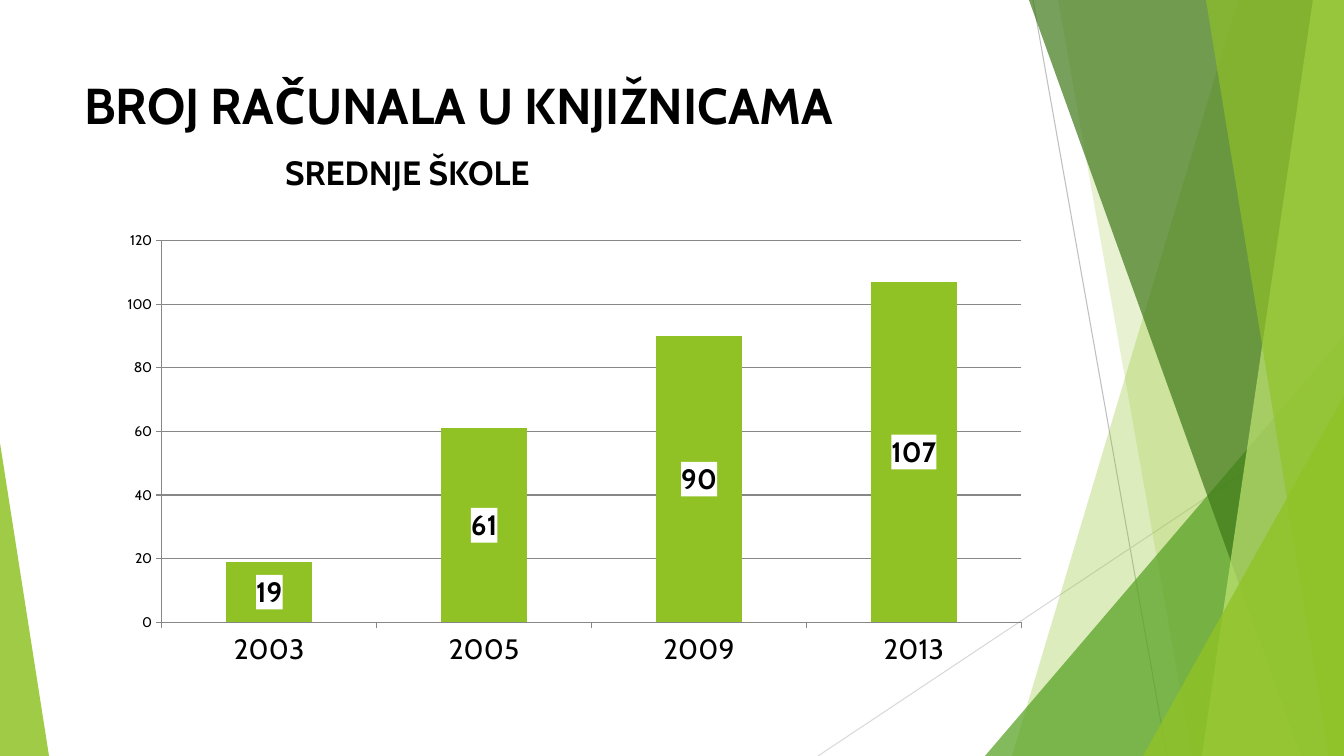
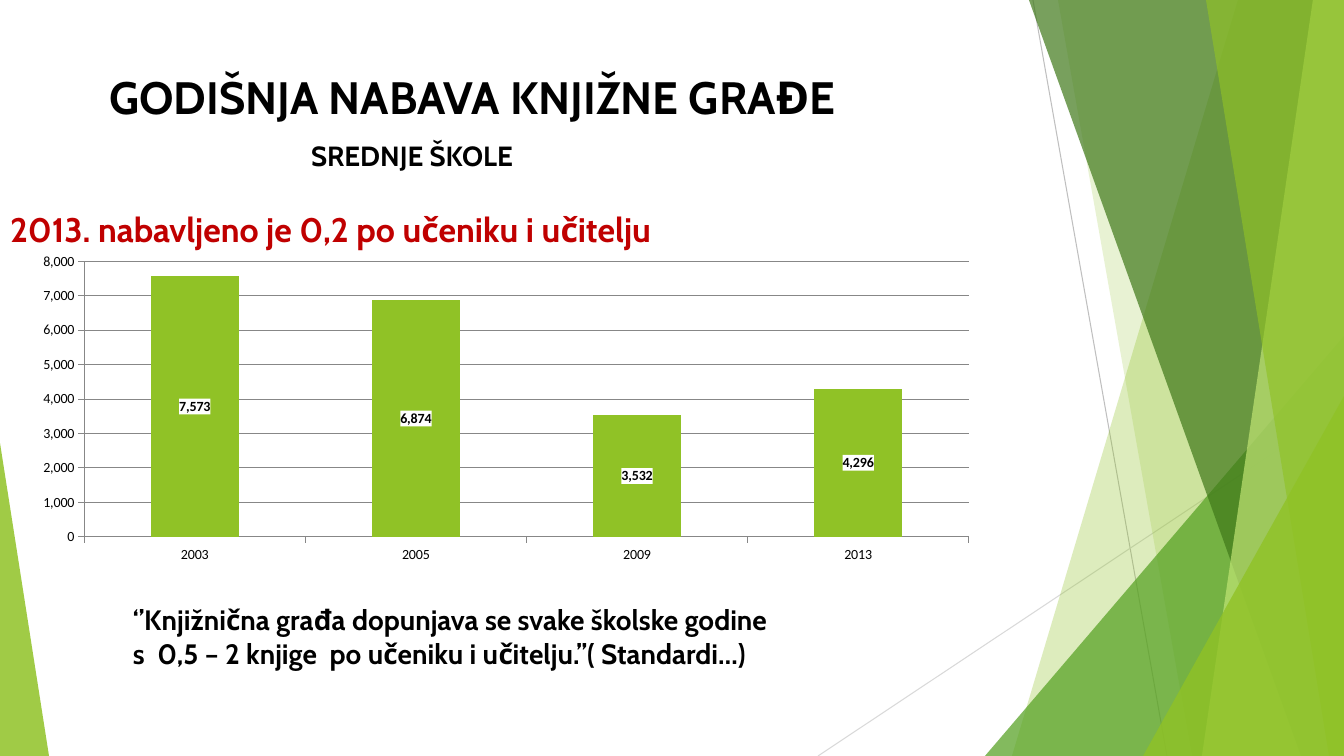
from pptx import Presentation
from pptx.chart.data import CategoryChartData
from pptx.dml.color import RGBColor
from pptx.enum.chart import XL_CHART_TYPE as ChartType, XL_TICK_MARK as TickMark
from pptx.enum.shapes import MSO_CONNECTOR as Connector, MSO_SHAPE as Shape
from pptx.oxml import parse_xml
from pptx.oxml.ns import nsdecls, qn
from pptx.util import Emu, Pt

WIDTH, HEIGHT = 1344, 756
EMU_PER_PX = 914400 / 100.8

BLACK = RGBColor(0x00, 0x00, 0x00)
RED = RGBColor(0xC0, 0x00, 0x00)
LIME = RGBColor(0x90, 0xC2, 0x26)
GREEN = RGBColor(0x54, 0xA0, 0x21)
DARK_GREEN = RGBColor(0x3F, 0x78, 0x19)
PALE_LIME = RGBColor(0xC0, 0xE4, 0x74)
AXIS_GREY = RGBColor(0x87, 0x87, 0x87)
GREY = RGBColor(0xBF, 0xBF, 0xBF)
LIGHT_GREY = RGBColor(0xD9, 0xD9, 0xD9)

THIN_LINES = [((1033, 0), (1167, HEIGHT), GREY), ((WIDTH, 406), (818, HEIGHT), LIGHT_GREY)]

FACETS = [
    ("band", (1238, 1012), LIME, 30),
    ("band", (1058, 1192), LIME, 20),
    ("triangle", (985, 336, 359, 1), GREEN, 72),
    ("band", (1029, 1301), DARK_GREEN, 70),
    ("band", (1313, 1202), PALE_LIME, 70),
    ("band", (1206, 1329), LIME, 65),
    ("triangle", (1143, 396, 201, 1), LIME, 80),
    ("triangle", (0, 443, 49, 0), LIME, 85),
]

YEARS = ["2003", "2005", "2009", "2013"]

SLIDES = [
    {
        "texts": [
            ("BROJ RAČUNALA U KNJIŽNICAMA", dict(box=(84, 74, 900, 62), size=36)),
            ("SREDNJE ŠKOLE", dict(box=(285, 152, 500, 42), size=24)),
        ],
        "chart": dict(box=(109, 223, 931, 453), values=[19, 61, 90, 107],
                      font="Cabin", category_size=20, label_size=20),
    },
    {
        "texts": [
            ("GODIŠNJA NABAVA KNJIŽNE GRAĐE", dict(box=(109, 69, 880, 56), size=32.4)),
            ("SREDNJE ŠKOLE", dict(box=(311, 139, 500, 36), size=19.8)),
            ("2013. nabavljeno je 0,2 po učeniku i učitelju",
             dict(box=(10, 209, 900, 42), size=24.3, color=RED)),
            ("‘’Knjižnična građa dopunjava se svake školske godine "
             "s  0,5 – 2 knjige  po učeniku i učitelju.’’( Standardi…)",
             dict(box=(133, 603, 643, 72), size=20)),
        ],
        "chart": dict(box=(24, 247, 964, 322), values=[7573, 6874, 3532, 4296],
                      font="Calibri", category_size=10, label_size=10),
    },
]


def px(*lengths):
    return [Emu(round(length * EMU_PER_PX)) for length in lengths]


def style_font(font, name, size, color=BLACK, bold=False):
    font.name, font.size, font.bold = name, Pt(size), bold
    font.color.rgb = color


def add_text(slide, text, box, size, color=BLACK, font="Cabin", bold=True):
    frame = slide.shapes.add_textbox(*px(*box)).text_frame
    frame.word_wrap = True
    frame.margin_left = frame.margin_right = frame.margin_top = frame.margin_bottom = 0
    run = frame.paragraphs[0].add_run()
    run.text = text
    style_font(run.font, font, size, color, bold)


def add_thin_line(slide, start, end, color):
    line = slide.shapes.add_connector(Connector.STRAIGHT, *px(*start, *end))
    line.line.color.rgb = color
    line.line.width = Pt(0.75)
    line._element.spPr.append(parse_xml(f"<a:effectLst {nsdecls('a')}/>"))


def add_facet(slide, kind, geometry, color, opacity):
    if kind == "band":
        top_x, bottom_x = geometry
        corners = [(WIDTH, 0), (WIDTH, HEIGHT), (bottom_x, HEIGHT)]
        builder = slide.shapes.build_freeform(*px(top_x, 0))
        builder.add_line_segments([px(*corner) for corner in corners])
        shape = builder.convert_to_shape()
    else:
        left, top, width, apex = geometry
        shape = slide.shapes.add_shape(
            Shape.ISOSCELES_TRIANGLE, *px(left, top, width, HEIGHT - top))
        shape.adjustments[0] = apex
    shape.shadow.inherit = False
    shape.line.fill.background()
    shape.fill.solid()
    shape.fill.fore_color.rgb = color
    fill_color = shape._element.spPr.find(qn("a:solidFill"))[0]
    fill_color.append(parse_xml(f'<a:alpha {nsdecls("a")} val="{opacity * 1000}"/>'))


def add_backdrop(slide):
    for line in THIN_LINES:
        add_thin_line(slide, *line)
    for facet in FACETS:
        add_facet(slide, *facet)


def add_column_chart(slide, box, values, font, category_size, label_size):
    data = CategoryChartData(number_format="#,##0")
    data.categories = YEARS
    data.add_series("Series 1", values)
    chart = slide.shapes.add_chart(ChartType.COLUMN_STACKED, *px(*box), data).chart
    chart.has_legend = chart.has_title = False
    style_font(chart.font, font, 10)

    for axis, size in ((chart.category_axis, category_size), (chart.value_axis, 10)):
        style_font(axis.tick_labels.font, font, size)
        axis.major_tick_mark = TickMark.OUTSIDE
        axis.minor_tick_mark = TickMark.NONE
        axis.format.line.color.rgb = AXIS_GREY
    chart.value_axis.has_major_gridlines = True
    chart.value_axis.major_gridlines.format.line.color.rgb = AXIS_GREY
    chart.value_axis.tick_labels.number_format = "#,##0"
    chart.value_axis.tick_labels.number_format_is_linked = False

    plot = chart.plots[0]
    plot.gap_width, plot.overlap, plot.vary_by_categories = 150, 100, False
    series = plot.series[0]
    series.format.fill.solid()
    series.format.fill.fore_color.rgb = LIME
    labels = series.data_labels
    labels.show_value = True
    style_font(labels.font, font, label_size, bold=True)
    labels._element.find(qn("c:txPr")).addprevious(parse_xml(
        f'<c:spPr {nsdecls("c", "a")}><a:solidFill><a:srgbClr val="FFFFFF"/>'
        "</a:solidFill></c:spPr>"))


def main():
    presentation = Presentation()
    presentation.slide_width, presentation.slide_height = px(WIDTH, HEIGHT)
    for content in SLIDES:
        slide = presentation.slides.add_slide(presentation.slide_layouts[6])
        add_backdrop(slide)
        add_column_chart(slide, **content["chart"])
        for text, text_format in content["texts"]:
            add_text(slide, text, **text_format)
    presentation.save("out.pptx")


if __name__ == "__main__":
    main()
